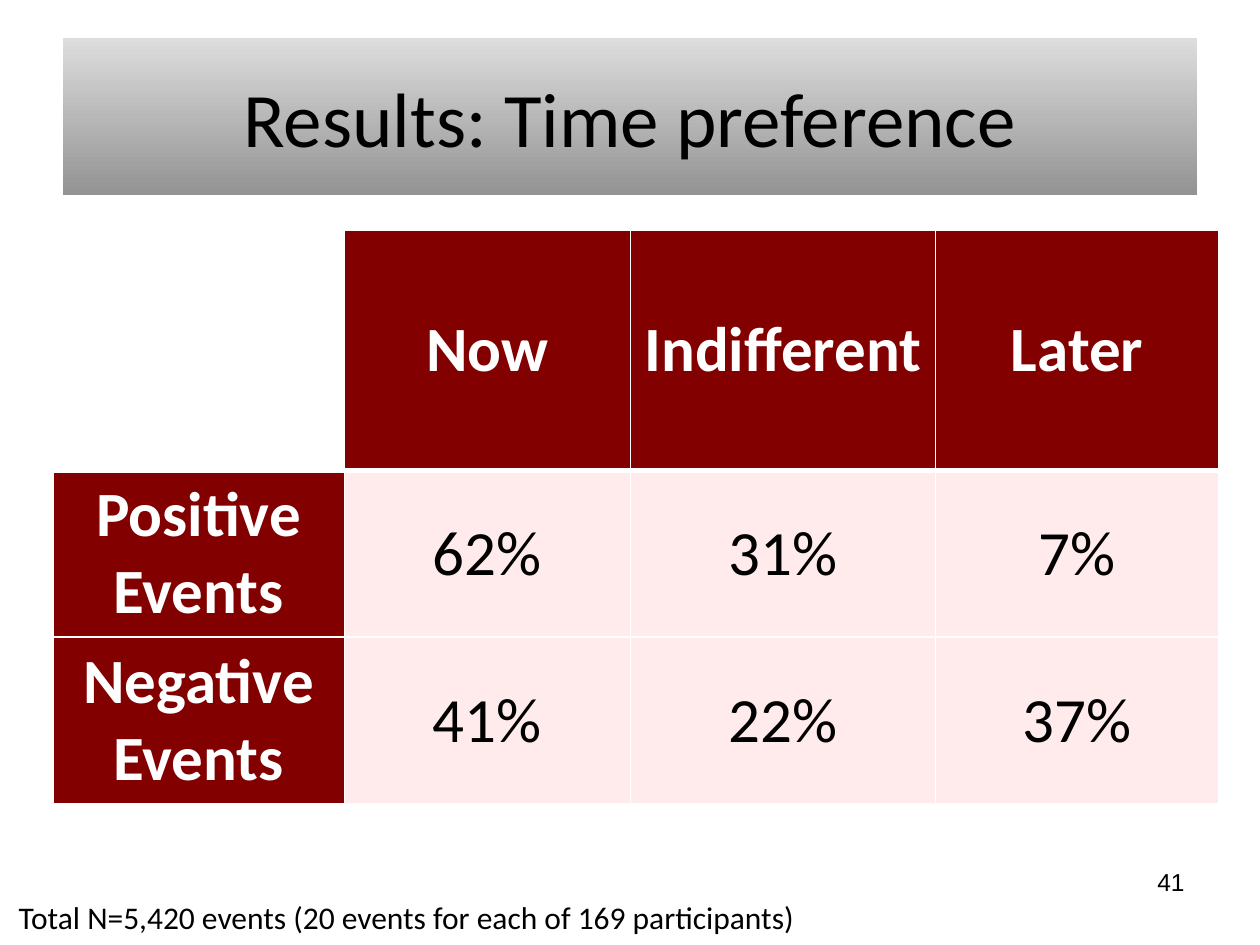
from dataclasses import dataclass

from lxml.etree import SubElement
from pptx import Presentation
from pptx.dml.color import RGBColor as RGB
from pptx.enum.text import MSO_ANCHOR as Anchor, PP_ALIGN as Align
from pptx.oxml.ns import qn
from pptx.util import Cm, Pt


@dataclass(frozen=True)
class Theme:
    font: str = "Calibri"
    number_font: str = "Arial"
    black: str = "000000"
    white: str = "FFFFFF"
    header: str = "820000"
    body: str = "FFEBEB"
    title_top: str = "DDDDDD"
    title_bottom: str = "939393"
    title_size: int = 44
    table_size: int = 36
    note_size: int = 18
    number_size: int = 14
    border: int = 1
    header_border: int = 3


T = Theme()

RESULTS = [
    ["", "Now", "Indifferent", "Later"],
    ["Positive Events", "62%", "31%", "7%"],
    ["Negative Events", "41%", "22%", "37%"],
]
COLUMN_WIDTHS = [5.87, 5.77, 6.15, 5.71]
ROW_HEIGHTS = [4.83, 3.3, 3.3]


def set_text(tf, text, size, color=T.black, font=T.font, align=Align.CENTER, bold=False):
    tf.text = text
    p = tf.paragraphs[0]
    p.alignment = align
    for r in p.runs:
        r.font.name, r.font.size, r.font.bold = font, Pt(size), bold
        r.font.color.rgb = RGB.from_string(color)


def add_title(s, text):
    sp = s.shapes.title
    sp.left, sp.top, sp.width, sp.height = Cm(1.27), Cm(0.76), Cm(22.86), Cm(3.18)
    sp.fill.gradient()
    sp.fill.gradient_angle = 270
    stops = zip(sp.fill.gradient_stops, (0, 1), (T.title_top, T.title_bottom))
    for stop, position, color in stops:
        stop.position = position
        stop.color.rgb = RGB.from_string(color)
    sp.text_frame.vertical_anchor = Anchor.MIDDLE
    set_text(sp.text_frame, text, T.title_size)


def set_borders(cell, widths):
    """Draw white borders; widths holds points by side (L, R, T, B)."""
    tc_pr = cell._tc.get_or_add_tcPr()
    for i, (side, width) in enumerate(widths.items()):
        ln = SubElement(tc_pr, qn(f"a:ln{side}"), w=str(Pt(width)))
        fill = SubElement(ln, qn("a:solidFill"))
        SubElement(fill, qn("a:srgbClr"), val=T.white)
        tc_pr.insert(i, ln)  # borders come before the cell fill


def format_cell(cell, text, row, col):
    is_header = row == 0 or col == 0
    fill = T.header if is_header else T.body
    cell.fill.solid()
    cell.fill.fore_color.rgb = RGB.from_string(fill if text else T.white)
    cell.vertical_anchor = Anchor.MIDDLE
    set_text(cell.text_frame, text, T.table_size,
             T.white if is_header else T.black, bold=is_header)
    widths = dict.fromkeys("LRTB", T.border)
    if row == 0:
        widths["B"] = T.header_border
    elif row == 1:
        widths["T"] = T.header_border
    set_borders(cell, widths)


def add_results_table(s, rows):
    table = s.shapes.add_table(len(rows), len(rows[0]), Cm(1.07), Cm(4.65),
                               Cm(sum(COLUMN_WIDTHS)), Cm(sum(ROW_HEIGHTS))).table
    for column, width in zip(table.columns, COLUMN_WIDTHS):
        column.width = Cm(width)
    for row, height in zip(table.rows, ROW_HEIGHTS):
        row.height = Cm(height)
    for i, row in enumerate(rows):
        for j, text in enumerate(row):
            format_cell(table.cell(i, j), text, i, j)


def add_label(s, text, box, size, wrap=True, **style):
    tf = s.shapes.add_textbox(*map(Cm, box)).text_frame
    tf.word_wrap = wrap
    set_text(tf, text, size, **style)


def main():
    prs = Presentation()
    prs.slide_width, prs.slide_height = Cm(25.4), Cm(19.05)
    s = prs.slides.add_slide(prs.slide_layouts[5])

    # Title band and results
    add_title(s, "Results: Time preference")
    add_results_table(s, RESULTS)

    # Sample note and slide number
    add_label(s, "Total N=5,420 events (20 events for each of 169 participants)",
              (0.03, 17.98, 16.33, 1.02), T.note_size, wrap=False)
    add_label(s, "41", (18.21, 17.35, 5.92, 1.32), T.number_size,
              font=T.number_font, align=Align.RIGHT)

    prs.save("out.pptx")


if __name__ == "__main__":
    main()
